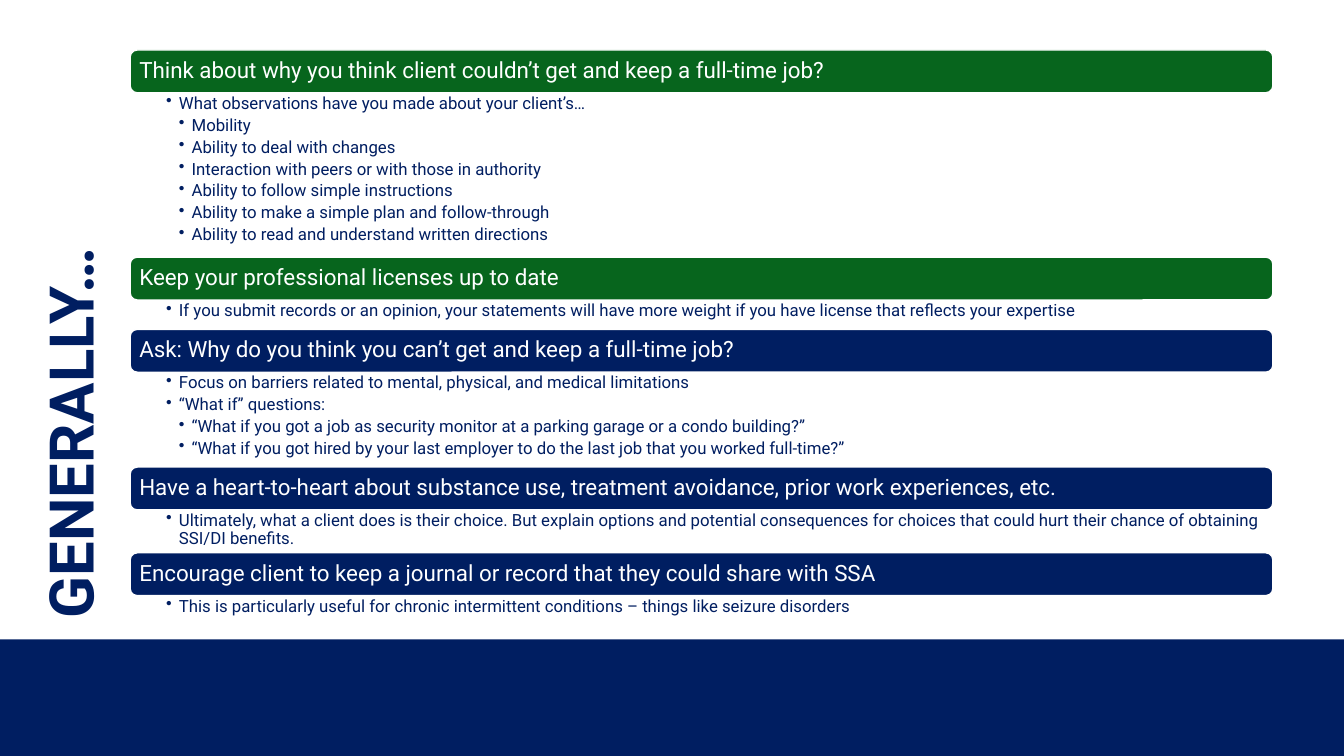
from dataclasses import dataclass

import lxml.etree
import pptx
import pptx.dml.color
import pptx.enum.shapes
import pptx.enum.text
import pptx.oxml.ns
import pptx.util

Cm, Pt = pptx.util.Cm, pptx.util.Pt
RGB = pptx.dml.color.RGBColor.from_string
SHAPE = pptx.enum.shapes.MSO_SHAPE
ANCHOR = pptx.enum.text.MSO_ANCHOR
ALIGN = pptx.enum.text.PP_ALIGN

LEFT, WIDTH = 3.28, 28.8
FIRST_TOP, BAR_HEIGHT = 1.26, 1.08

SECTIONS = [
    ("Think about why you think client couldn’t get and keep a full-time job?", "green", 4.14, [
        (1, "What observations have you made about your client’s…"),
        (2, "Mobility"),
        (2, "Ability to deal with changes"),
        (2, "Interaction with peers or with those in authority"),
        (2, "Ability to follow simple instructions"),
        (2, "Ability to make a simple plan and follow-through"),
        (2, "Ability to read and understand written directions"),
    ]),
    ("Keep your professional licenses up to date", "green", 0.74, [
        (1, "If you submit records or an opinion, your statements will have more weight "
            "if you have license that reflects your expertise"),
    ]),
    ("Ask: Why do you think you can’t get and keep a full-time job?", "navy", 2.39, [
        (1, "Focus on barriers related to mental, physical, and medical limitations"),
        (1, "“What if” questions:"),
        (2, "“What if you got a job as security monitor at a parking garage or a condo building?”"),
        (2, "“What if you got hired by your last employer to do the last job that you worked full-time?”"),
    ]),
    ("Have a heart-to-heart about substance use, treatment avoidance, prior work experiences, etc.",
     "navy", 1.08, [
        (1, "Ultimately, what a client does is their choice. But explain options and potential "
            "consequences for choices that could hurt their chance of obtaining SSI/DI benefits."),
    ]),
    ("Encourage client to keep a journal or record that they could share with SSA", "navy", 0.74, [
        (1, "This is particularly useful for chronic intermittent conditions – "
            "things like seizure disorders"),
    ]),
]


@dataclass
class Theme:
    navy: str = "001E61"
    green: str = "07651D"
    white: str = "FFFFFF"
    font: str = "Roboto"
    title: int = 44
    heading: int = 16
    body: int = 12


def apply(obj, values):
    for name, value in values.items():
        setattr(obj, name, value)


class SlideBuilder:
    """Draws styled elements on the current slide."""

    def __init__(self, slide, theme):
        self.s, self.theme = slide, theme

    def frame(self, sp, anchor, insets):
        left, top, right, bottom = (Cm(v) for v in insets)
        apply(sp.text_frame, {
            "word_wrap": True, "vertical_anchor": anchor,
            "auto_size": pptx.enum.text.MSO_AUTO_SIZE.NONE,
            "margin_left": left, "margin_top": top,
            "margin_right": right, "margin_bottom": bottom})
        return sp.text_frame

    def add_text(self, p, text, size, color, bold=False, after=0):
        apply(p, {"alignment": ALIGN.LEFT, "line_spacing": 0.9,
                  "space_before": Pt(0), "space_after": Pt(after)})
        r = p.add_run()
        r.text = text
        apply(r.font, {"name": self.theme.font, "size": Pt(size), "bold": bold})
        r.font.color.rgb = RGB(color)

    def shape(self, kind, box, fill, line=None):
        sp = self.s.shapes.add_shape(kind, *(Cm(v) for v in box))
        sp.shadow.inherit = False
        sp.fill.solid()
        sp.fill.fore_color.rgb = RGB(fill)
        if line:
            sp.line.color.rgb = RGB(line)
            sp.line.width = Pt(1)
        else:
            sp.line.fill.background()
        return sp

    def title(self, text, box, rotation):
        sp = self.s.shapes.title
        left, top, width, height = (Cm(v) for v in box)
        apply(sp, {"left": left, "top": top, "width": width, "height": height,
                   "rotation": rotation})
        tf = self.frame(sp, ANCHOR.MIDDLE, (0.25, 0.13, 0.25, 0.13))
        self.add_text(tf.paragraphs[0], text, self.theme.title, self.theme.navy, bold=True)

    def band(self, box):
        self.shape(SHAPE.RECTANGLE, box, self.theme.navy)

    def heading(self, text, box, fill):
        sp = self.shape(SHAPE.ROUNDED_RECTANGLE, box, fill, self.theme.white)
        tf = self.frame(sp, ANCHOR.MIDDLE, (0.18,) * 4)
        self.add_text(tf.paragraphs[0], text, self.theme.heading, self.theme.white)

    def bullets(self, items, box):
        sp = self.s.shapes.add_textbox(*(Cm(v) for v in box))
        tf = self.frame(sp, ANCHOR.TOP, (0.91, 0.05, 0.3, 0.05))
        for i, (level, text) in enumerate(items):
            p = tf.add_paragraph() if i else tf.paragraphs[0]
            p.level = level
            pPr = p._p.get_or_add_pPr()
            pPr.set("marL", str(Cm(0.32 * level)))
            pPr.set("indent", str(Cm(-0.32)))
            lxml.etree.SubElement(pPr, pptx.oxml.ns.qn("a:buChar")).set("char", "•")
            self.add_text(p, text, self.theme.body, self.theme.navy, after=2.7)


def main():
    prs = pptx.Presentation()
    apply(prs, {"slide_width": Cm(33.87), "slide_height": Cm(19.05)})
    theme = Theme()
    slide = SlideBuilder(prs.slides.add_slide(prs.slide_layouts[5]), theme)
    slide.band((0, 16.11, 33.87, 2.94))
    slide.title("GENERALLY…", (-5.46, 6.68, 14.63, 3.68), 270)
    top = FIRST_TOP
    for heading, color, height, items in SECTIONS:
        slide.heading(heading, (LEFT, top, WIDTH, BAR_HEIGHT), getattr(theme, color))
        top += BAR_HEIGHT
        slide.bullets(items, (LEFT, top, WIDTH, height))
        top += height
    prs.save("out.pptx")


if __name__ == "__main__":
    main()
